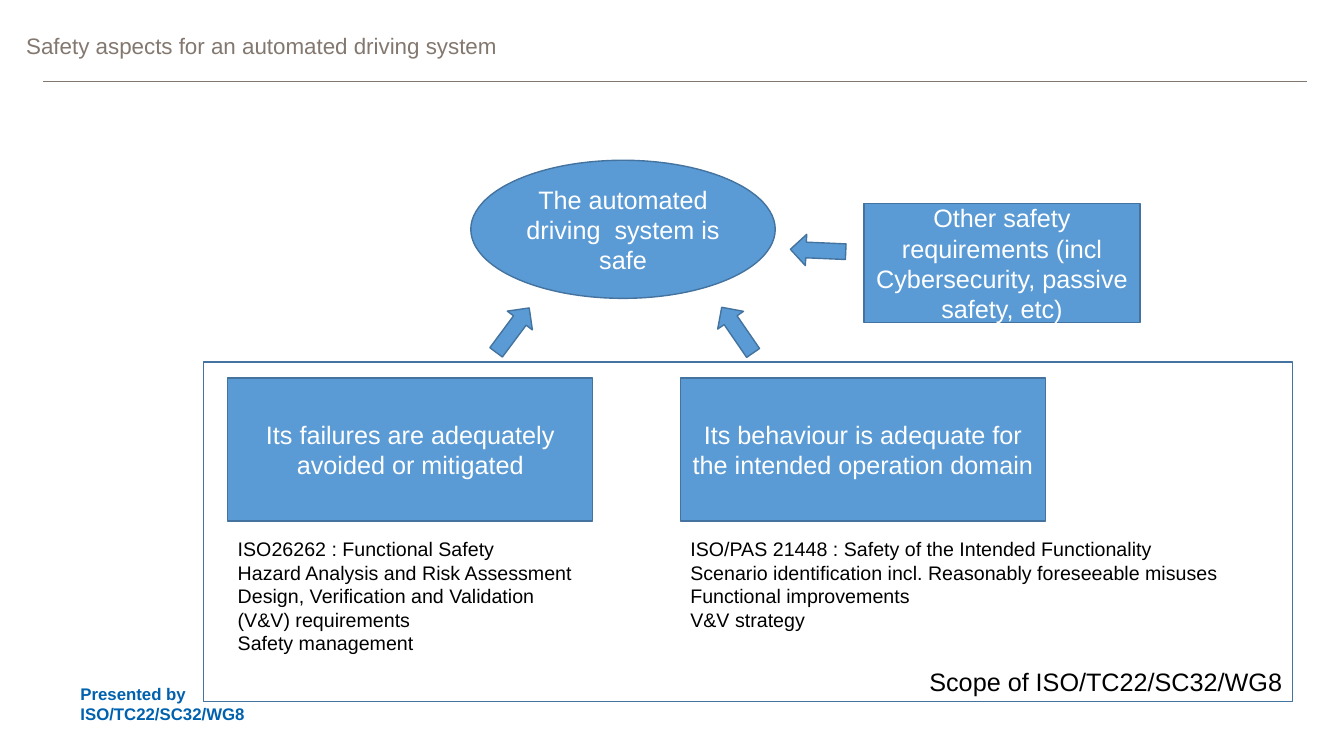
from dataclasses import dataclass
from typing import Optional

from lxml.etree import SubElement
from pptx import Presentation
from pptx.dml.color import RGBColor
from pptx.enum.shapes import MSO_CONNECTOR as Connector, MSO_SHAPE as Preset
from pptx.enum.text import MSO_ANCHOR as Anchor, PP_ALIGN as Align
from pptx.oxml.ns import qn
from pptx.util import Inches, Pt

COLORS = {
    "fill": "5B9BD5",
    "outline": "43739E",
    "heading": "83786F",
    "presenter": "0061AE",
    "white": "FFFFFF",
    "black": "000000",
}
FONT = "Arial"
SLIDE_WIDTH, SLIDE_HEIGHT = Inches(13.333), Inches(7.5)


@dataclass(frozen=True)
class Area:
    """Position and size in percent of the slide's width and height."""
    left: float
    top: float
    width: float
    height: float

    def emu(self) -> tuple[int, int, int, int]:
        return (across(self.left), down(self.top),
                across(self.width), down(self.height))


@dataclass(frozen=True)
class TextStyle:
    size: int
    color: str
    bold: bool = False
    align: Align = Align.LEFT
    anchor: Anchor = Anchor.TOP
    spacing: float = 1.0


@dataclass(frozen=True)
class Block:
    area: Area
    preset: Preset
    text: str = ""
    fill: Optional[str] = "fill"
    rotation: float = 0


@dataclass(frozen=True)
class Passage:
    area: Area
    lines: tuple[str, ...]
    style: TextStyle
    wrap: bool = True
    side_inset: float = 0.1


HEADING = TextStyle(16, "heading", spacing=0.9)
PRESENTER = TextStyle(12, "presenter", bold=True, anchor=Anchor.MIDDLE)
DETAIL = TextStyle(14, "black")
CLAIM = TextStyle(18, "white", align=Align.CENTER, anchor=Anchor.MIDDLE)
SCOPE = TextStyle(18, "black", align=Align.RIGHT, anchor=Anchor.BOTTOM)

FAILURES_LEFT, BEHAVIOUR_LEFT = 16.95, 50.63
PILLAR_TOP, PILLAR_WIDTH, PILLAR_HEIGHT = 50, 27.15, 18.93
DETAIL_TOP = 70.4
ARROW_WIDTH, ARROW_HEIGHT = 2.33, 7.33

PASSAGES = [
    Passage(Area(5.25, 90.4, 20.48, 5.33),
            ("Presented by ISO/TC22/SC32/WG8",), PRESENTER),
    Passage(Area(1.95, 4, 95.25, 4.53),
            ("Safety aspects for an automated driving system",), HEADING,
            side_inset=0),
    Passage(Area(FAILURES_LEFT, DETAIL_TOP, PILLAR_WIDTH, 17.07),
            ("ISO26262 : Functional Safety",
             "Hazard Analysis and Risk Assessment",
             "Design, Verification and Validation (V&V) requirements",
             "Safety management"), DETAIL),
    Passage(Area(BEHAVIOUR_LEFT, DETAIL_TOP, 40.95, 13.87),
            ("ISO/PAS 21448 : Safety of the Intended Functionality",
             "Scenario identification incl. Reasonably foreseeable misuses",
             "Functional improvements",
             "V&V strategy"), DETAIL, wrap=False),
]

CLAIMS = [
    Block(Area(35.03, 21.2, 22.65, 18.27), Preset.OVAL,
          "The automated driving  system is safe"),
    Block(Area(FAILURES_LEFT, PILLAR_TOP, PILLAR_WIDTH, PILLAR_HEIGHT),
          Preset.RECTANGLE,
          "Its failures are adequately avoided or mitigated"),
    Block(Area(BEHAVIOUR_LEFT, PILLAR_TOP, PILLAR_WIDTH, PILLAR_HEIGHT),
          Preset.RECTANGLE,
          "Its behaviour is adequate for the intended operation domain"),
    Block(Area(64.28, 26.93, 20.55, 15.73), Preset.RECTANGLE,
          "Other safety requirements (incl Cybersecurity, passive safety, etc)"),
]

SUPPORT_ARROWS = [
    Block(Area(left, top, ARROW_WIDTH, ARROW_HEIGHT), Preset.DOWN_ARROW,
          rotation=rotation)
    for left, top, rotation in (
        (36.98, 40, 216.7), (53.7, 40, 145.5), (59.7, 29.47, 92.5))
]

SCOPE_FRAME = Block(Area(15.15, 47.87, 81, 44.93), Preset.RECTANGLE,
                    "Scope of ISO/TC22/SC32/WG8", fill=None)


def across(percent: float) -> int:
    return round(SLIDE_WIDTH * percent / 100)


def down(percent: float) -> int:
    return round(SLIDE_HEIGHT * percent / 100)


def color(name: str) -> RGBColor:
    return RGBColor.from_string(COLORS[name])


def write(frame, lines: tuple[str, ...], style: TextStyle,
          wrap: bool = True) -> None:
    frame.word_wrap = wrap
    frame.vertical_anchor = style.anchor
    frame.text = "\n".join(lines)
    for paragraph in frame.paragraphs:
        paragraph.alignment = style.align
        paragraph.line_spacing = style.spacing
        font = paragraph.font
        font.name, font.size, font.bold = FONT, Pt(style.size), style.bold
        font.color.rgb = color(style.color)


def add_passage(slide, passage: Passage) -> None:
    frame = slide.shapes.add_textbox(*passage.area.emu()).text_frame
    frame.margin_left = frame.margin_right = Inches(passage.side_inset)
    write(frame, passage.lines, passage.style, passage.wrap)


def add_block(slide, block: Block, style: TextStyle) -> None:
    shape = slide.shapes.add_shape(block.preset, *block.area.emu())
    shape.shadow.inherit = False
    shape.rotation = block.rotation
    if block.fill:
        shape.fill.solid()
        shape.fill.fore_color.rgb = color(block.fill)
    else:
        shape.fill.background()
    shape.line.color.rgb = color("outline")
    shape.line.width = Pt(1)
    if block.text:
        write(shape.text_frame, (block.text,), style)


def add_heading_rule(slide) -> None:
    y = down(10.8)
    rule = slide.shapes.add_connector(
        Connector.STRAIGHT, across(3.23), y, across(97.28), y)
    rule.line.color.rgb = color("heading")
    rule.line.width = Pt(0.75)
    SubElement(rule.element.spPr, qn("a:effectLst"))


def main() -> None:
    deck = Presentation()
    deck.slide_width, deck.slide_height = SLIDE_WIDTH, SLIDE_HEIGHT
    slide = deck.slides.add_slide(deck.slide_layouts[6])
    add_heading_rule(slide)
    for passage in PASSAGES:
        add_passage(slide, passage)
    for block in CLAIMS + SUPPORT_ARROWS:
        add_block(slide, block, CLAIM)
    add_block(slide, SCOPE_FRAME, SCOPE)
    deck.save("out.pptx")


if __name__ == "__main__":
    main()
